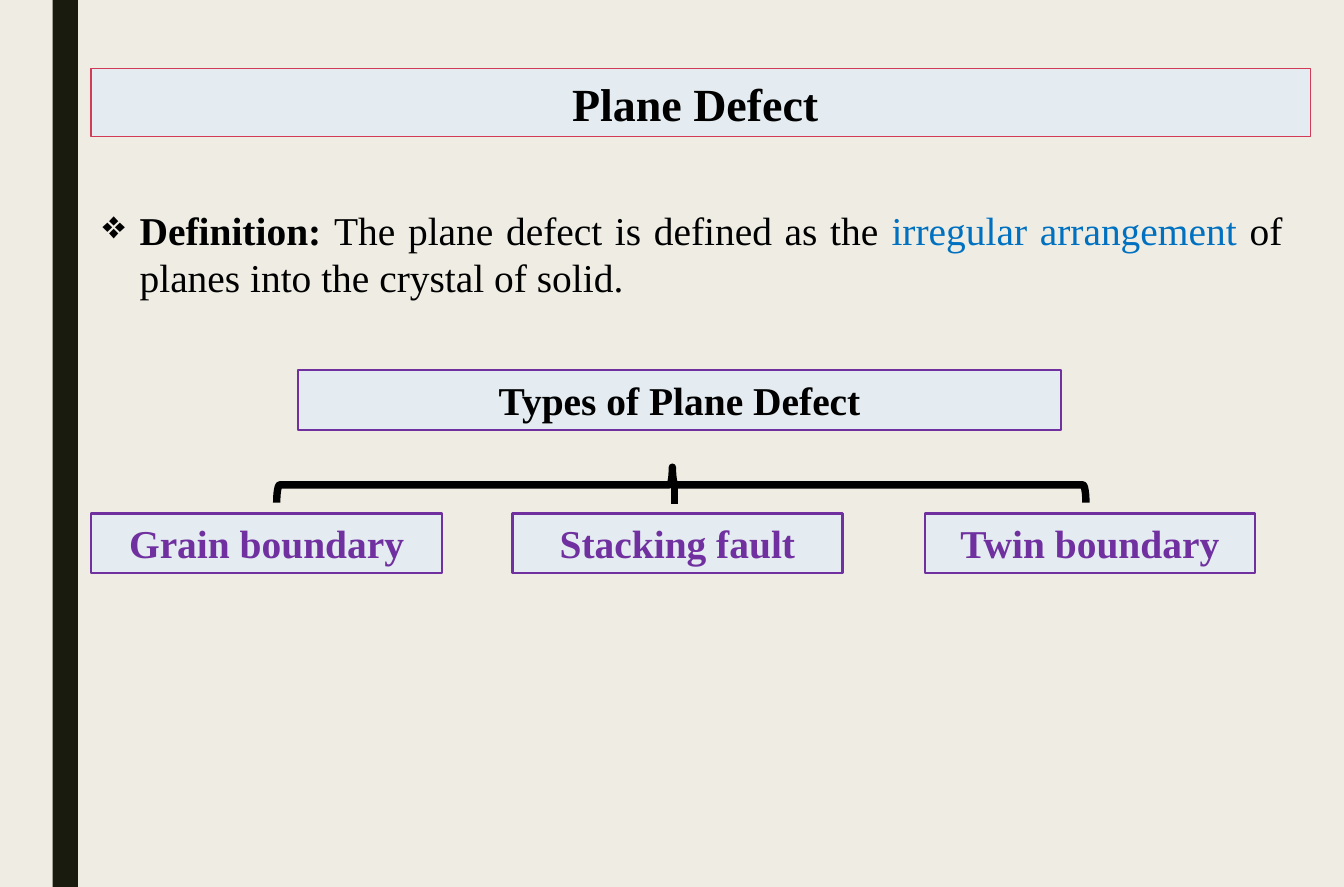
from dataclasses import dataclass

from lxml import etree
from pptx import Presentation
from pptx import util as u
from pptx.dml.color import RGBColor
from pptx.enum import shapes, text
from pptx.oxml import ns


@dataclass(frozen=True)
class Theme:
    font: str = "Times New Roman"
    paper: str = "EFEDE3"
    stripe: str = "191B0E"
    panel: str = "E4ECF1"
    title_edge: str = "D13B56"
    purple: str = "7030A0"
    accent: str = "0070C0"
    ink: str = "000000"
    title_size: float = 28
    body_size: float = 24
    thin: float = 0.75
    medium: float = 1.5
    thick: float = 4.5


@dataclass(frozen=True)
class Box:
    left: float
    top: float
    width: float
    height: float

    def lengths(self):
        return [u.Pt(n) for n in (self.left, self.top, self.width, self.height)]


THEME = Theme()
SLIDE = Box(0, 0, 817.92, 540)


def add_text(para, content, size=THEME.body_size, color=THEME.ink, bold=False):
    span = para.add_run()
    span.text = content
    span.font.name = THEME.font
    span.font.size = u.Pt(size)
    span.font.bold = bold
    span.font.color.rgb = RGBColor.from_string(color)


def add_block(page, box, fill=None, edge=None, weight=THEME.medium,
              kind=shapes.MSO_SHAPE.RECTANGLE):
    block = page.shapes.add_shape(kind, *box.lengths())
    block.shadow.inherit = False
    if fill:
        block.fill.solid()
        block.fill.fore_color.rgb = RGBColor.from_string(fill)
    else:
        block.fill.background()
    if edge:
        block.line.color.rgb = RGBColor.from_string(edge)
        block.line.width = u.Pt(weight)
    else:
        block.line.fill.background()
    return block


def add_label(page, box, content, edge=THEME.purple, weight=THEME.medium, **style):
    label = add_block(page, box, THEME.panel, edge, weight)
    frame = label.text_frame
    frame.word_wrap = True
    frame.vertical_anchor = text.MSO_ANCHOR.MIDDLE
    para = frame.paragraphs[0]
    para.alignment = text.PP_ALIGN.CENTER
    add_text(para, content, bold=True, **style)


def add_backdrop(page, box):
    page.background.fill.solid()
    page.background.fill.fore_color.rgb = RGBColor.from_string(THEME.paper)
    stripe = Box(box.left + 32.1, box.top, 15.3, box.height)
    add_block(page, stripe, THEME.stripe)


def add_definition(page, box):
    frame = page.shapes.add_textbox(*box.lengths()).text_frame
    frame.word_wrap = True
    para = frame.paragraphs[0]
    para.alignment = text.PP_ALIGN.JUSTIFY
    layout = para._p.get_or_add_pPr()
    indent = u.Pt(22.5)
    layout.set("marL", str(indent))
    layout.set("indent", str(-indent))
    etree.SubElement(layout, ns.qn("a:buChar")).set("char", "❖")
    add_text(para, "Definition: ", bold=True)
    add_text(para, "The plane defect is defined as the ")
    add_text(para, "irregular arrangement ", color=THEME.accent)
    add_text(para, "of planes into the crystal of solid. ")


def add_brace(page, box):
    turn = (box.width - box.height) / 2
    upright = Box(box.left + turn, box.top - turn, box.height, box.width)
    brace = add_block(page, upright, edge=THEME.ink, weight=THEME.thick,
                      kind=shapes.MSO_SHAPE.RIGHT_BRACE)
    brace.rotation = 270
    brace.adjustments[0] = 0.083
    brace.adjustments[1] = 0.489


def add_stem(page, x, top, bottom):
    stem = page.shapes.add_connector(
        shapes.MSO_CONNECTOR.STRAIGHT, u.Pt(x), u.Pt(top), u.Pt(x), u.Pt(bottom))
    stem.line.color.rgb = RGBColor.from_string(THEME.ink)
    stem.line.width = u.Pt(THEME.thick)
    etree.SubElement(stem._element.spPr, ns.qn("a:effectLst"))


def add_types(page, box):
    row_height = 36.3
    heading = Box(box.left + 126, box.top, 464.4, row_height)
    add_label(page, heading, "Types of Plane Defect")
    add_brace(page, Box(box.left + 113, box.top + 59, 492.5, 21.6))
    add_stem(page, box.left + 355, box.top + 69.8, box.top + 81.4)
    row_top = box.top + box.height - row_height
    branches = (("Grain boundary", 0, 213.8),
                ("Stacking fault", 256.4, 200.9),
                ("Twin boundary", 507.4, 200.9))
    for name, offset, width in branches:
        branch = Box(box.left + offset, row_top, width, row_height)
        add_label(page, branch, name, color=THEME.purple)


def add_plane_defect_slide(deck, box):
    page = deck.slides.add_slide(deck.slide_layouts[6])
    left = box.left + 55.4
    add_backdrop(page, box)
    add_label(page, Box(left, box.top + 41.9, 742.3, 41.2), "Plane Defect ",
              edge=THEME.title_edge, weight=THEME.thin, size=THEME.title_size)
    add_definition(page, Box(left, box.top + 121.7, 732.2, 65.4))
    add_types(page, Box(left, box.top + 225.4, 708.3, 123.4))


def main():
    deck = Presentation()
    deck.slide_width = u.Pt(SLIDE.width)
    deck.slide_height = u.Pt(SLIDE.height)
    add_plane_defect_slide(deck, SLIDE)
    deck.save("out.pptx")


if __name__ == "__main__":
    main()
